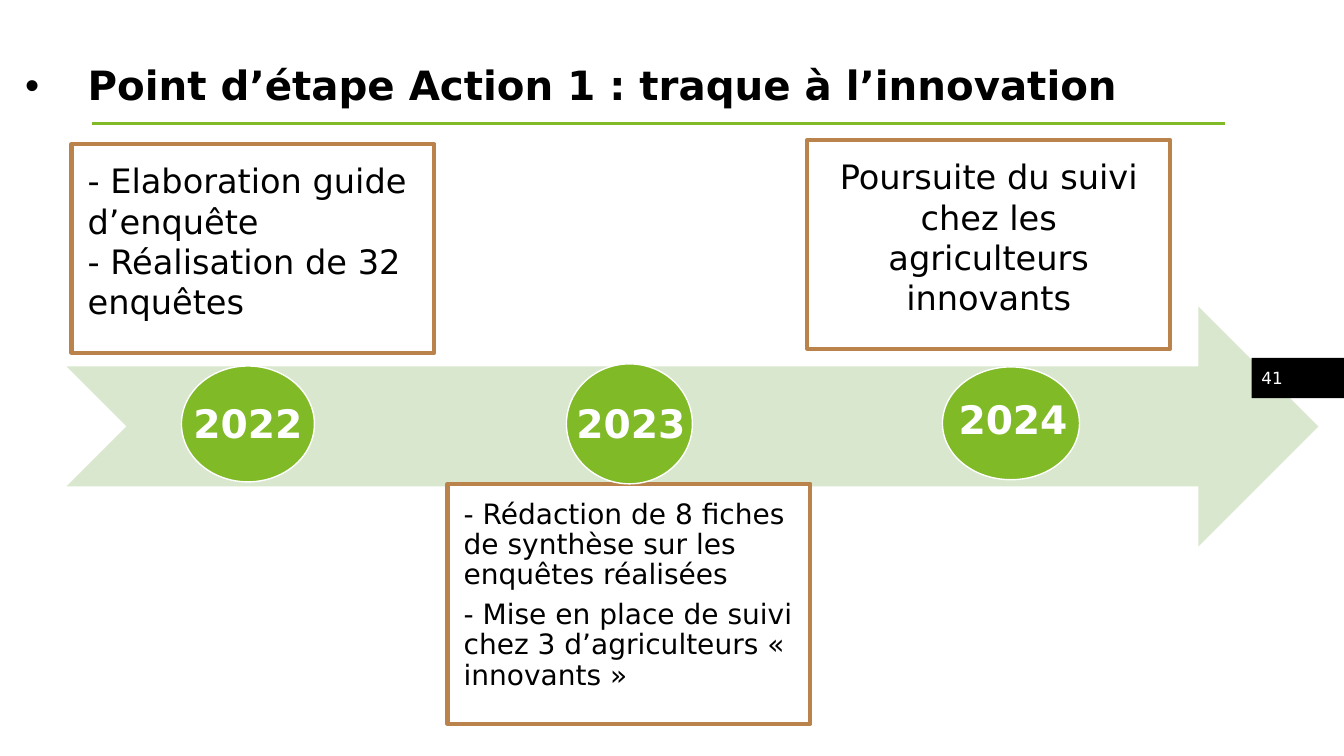
"""Builds the 2022-2024 timeline slide for Action 1."""
from dataclasses import dataclass

from lxml import etree
from pptx import Presentation
from pptx.dml.color import RGBColor
from pptx.enum import shapes as kinds, text as t
from pptx.oxml import ns
from pptx.util import Pt

FONT = "DejaVu Sans"
GREEN, PALE_GREEN, BROWN = "80BA27", "D8E7CD", "BA834B"
BLACK, WHITE = "000000", "FFFFFF"
LEFT, CENTER = t.PP_ALIGN.LEFT, t.PP_ALIGN.CENTER
TOP, MIDDLE = t.MSO_ANCHOR.TOP, t.MSO_ANCHOR.MIDDLE
Box = tuple[float, float, float, float]


@dataclass
class Step:
    year: str
    disc: Box
    label: Box
    card: Box
    lines: list[str]
    size: float = 24
    align: t.PP_ALIGN = LEFT
    line_spacing: float = 1.0
    space_after: float = 0


STEPS = [
    Step("2022", (129.6, 261.4, 95, 82.8), (108, 281.5, 138.2, 41),
         (51.1, 103, 259.2, 149),
         ["- Elaboration guide d’enquête", "- Réalisation de 32 enquêtes"]),
    Step("2023", (404.6, 259.9, 90, 85.7), (381.6, 281.5, 138.2, 41),
         (319.7, 345.6, 259.2, 171.4),
         ["- Rédaction de 8 fiches de synthèse sur les enquêtes réalisées",
          "- Mise en place de suivi chez 3 d’agriculteurs « innovants »"],
         size=20, line_spacing=0.9, space_after=7),
    Step("2024", (673.2, 262.1, 97.9, 80.6), (654.5, 278.6, 138.2, 41),
         (576.7, 100.1, 259.2, 149),
         ["Poursuite du suivi chez les agriculteurs innovants"], align=CENTER),
]


def color(hex_code: str) -> RGBColor:
    return RGBColor.from_string(hex_code)


def write(shape, lines: list[str], size: float, ink: str, bold: bool = False,
          align: t.PP_ALIGN = LEFT, anchor: t.MSO_ANCHOR = TOP,
          inset: float | None = None, line_spacing: float = 1.0,
          space_after: float = 0) -> None:
    frame = shape.text_frame
    frame.text = "\n".join(lines)
    frame.word_wrap = True
    frame.auto_size = t.MSO_AUTO_SIZE.NONE
    frame.vertical_anchor = anchor
    if inset is not None:
        frame.margin_left = frame.margin_right = Pt(inset)
        frame.margin_top = frame.margin_bottom = Pt(inset)
    for paragraph in frame.paragraphs:
        paragraph.alignment = align
        paragraph.line_spacing = line_spacing
        paragraph.space_before = Pt(0)
        paragraph.space_after = Pt(space_after)
        for run in paragraph.runs:
            run.font.name = FONT
            run.font.size = Pt(size)
            run.font.bold = bold
            run.font.color.rgb = color(ink)


def add_block(slide, kind: kinds.MSO_SHAPE, box: Box, fill: str,
              outline: str | None = None, weight: float = 1):
    block = slide.shapes.add_shape(kind, *map(Pt, box))
    block.shadow.inherit = False
    block.fill.solid()
    block.fill.fore_color.rgb = color(fill)
    if outline:
        block.line.color.rgb = color(outline)
        block.line.width = Pt(weight)
    else:
        block.line.fill.background()
    return block


def add_heading(slide) -> None:
    title = slide.shapes.title
    title.left, title.top, title.width, title.height = map(Pt, (10.8, 28.8, 864.7, 67.7))
    title.text_frame.text = "Point d’étape Action 1 : traque à l’innovation"
    write(title, [title.text_frame.text], 28.8, BLACK, bold=True,
          anchor=MIDDLE, line_spacing=0.9)
    properties = title.text_frame.paragraphs[0]._p.get_or_add_pPr()
    properties.set("marL", str(Pt(44.64)))
    properties.set("indent", str(Pt(-44.64)))
    etree.SubElement(properties, ns.qn("a:buFont")).set("typeface", "Arial")
    etree.SubElement(properties, ns.qn("a:buChar")).set("char", "•")

    rule = slide.shapes.add_connector(
        kinds.MSO_CONNECTOR.STRAIGHT, Pt(65.5), Pt(88), Pt(874.8), Pt(88))
    rule.line.color.rgb = color(GREEN)
    rule.line.width = Pt(2.25)
    etree.SubElement(rule._element.spPr, ns.qn("a:effectLst"))


def add_step(slide, step: Step) -> None:
    card = add_block(slide, kinds.MSO_SHAPE.RECTANGLE, step.card, WHITE, BROWN, 3)
    write(card, step.lines, step.size, BLACK, align=step.align, inset=11.5,
          line_spacing=step.line_spacing, space_after=step.space_after)
    add_block(slide, kinds.MSO_SHAPE.OVAL, step.disc, GREEN, WHITE)
    label = slide.shapes.add_textbox(*map(Pt, step.label))
    write(label, [step.year], 28, WHITE, bold=True, align=CENTER)


def main() -> None:
    deck = Presentation()
    deck.slide_width, deck.slide_height = Pt(960), Pt(540)
    slide = deck.slides.add_slide(deck.slide_layouts[5])
    add_heading(slide)
    add_block(slide, kinds.MSO_SHAPE.NOTCHED_RIGHT_ARROW,
              (47.5, 218.9, 894.2, 171.4), PALE_GREEN)
    for step in STEPS:
        add_step(slide, step)
    page_number = add_block(slide, kinds.MSO_SHAPE.RECTANGLE,
                            (894, 255.6, 66, 28.8), BLACK)
    write(page_number, ["41"], 12, WHITE, anchor=MIDDLE)
    deck.save("out.pptx")


if __name__ == "__main__":
    main()
